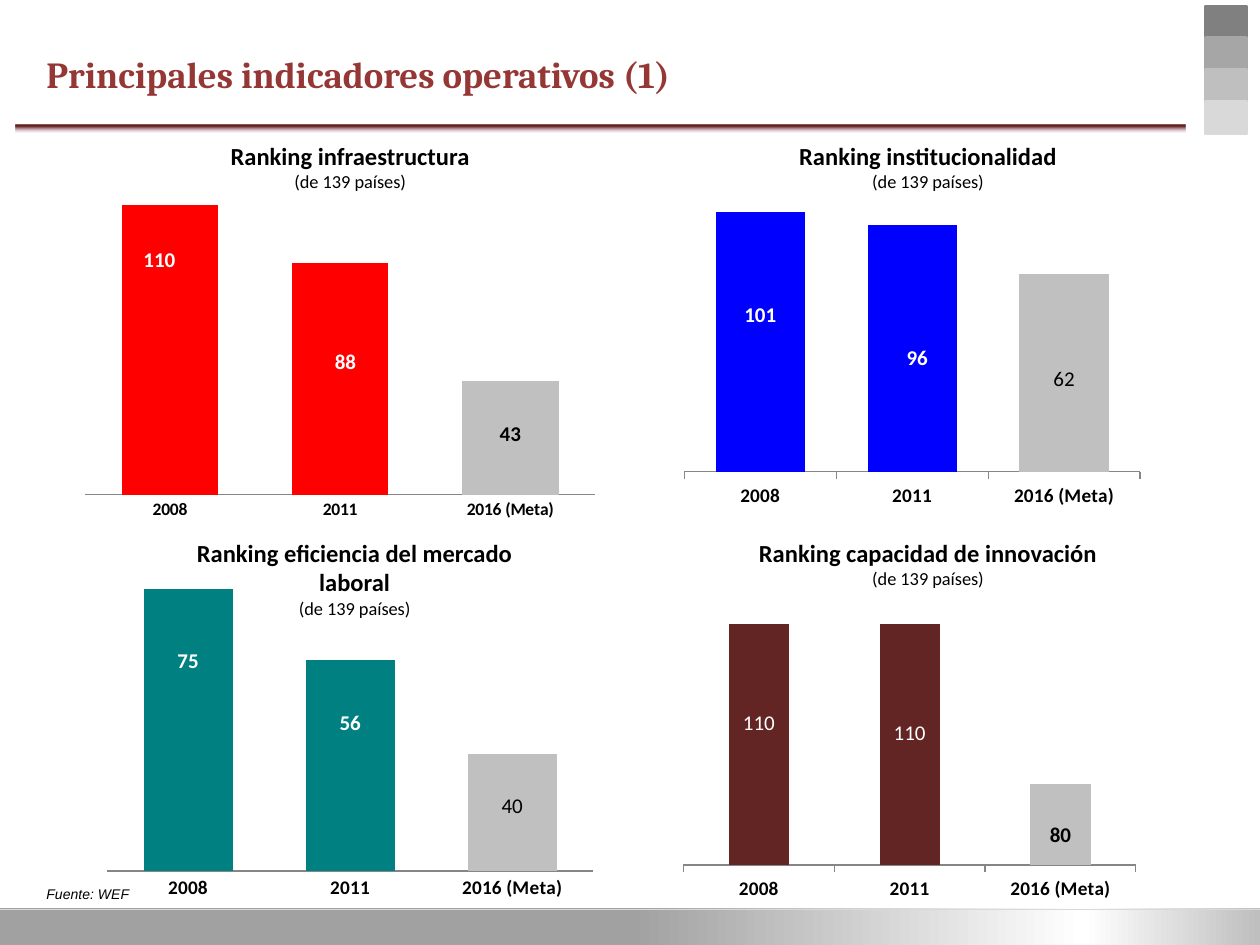
from dataclasses import dataclass
from typing import Any, NamedTuple

from pptx import Presentation
from pptx.chart.data import CategoryChartData
from pptx.dml.color import RGBColor
from pptx.enum.chart import XL_CHART_TYPE, XL_LABEL_POSITION, XL_TICK_MARK
from pptx.enum.shapes import MSO_CONNECTOR, MSO_SHAPE
from pptx.enum.text import PP_ALIGN
from pptx.oxml import parse_xml
from pptx.oxml.ns import nsdecls
from pptx.util import Inches, Pt


@dataclass(frozen=True)
class Theme:
    body: str = "Calibri"
    heading: str = "Cambria"
    note: str = "Arial"
    title: str = "953735"
    black: str = "000000"
    white: str = "FFFFFF"
    axis: str = "868686"
    goal: str = "C0C0C0"
    divider: str = "D9D9D9"
    steps: tuple = ("808080", "A6A6A6", "BFBFBF", "D9D9D9")
    footer: tuple = ((0, "A1A1A1", 100), (50, "A1A1A1", 100), (86, "FFFFFF", 100), (100, "BFBFBF", 100))
    rule: tuple = ((0, "632523", 100), (23, "632523", 100), (97, "FFEBFA", 43), (100, "85C2FF", 100))
    title_size: float = 21
    head_size: float = 14
    sub_size: float = 10.5
    label_size: float = 12
    note_size: float = 8


class Box(NamedTuple):
    """Left, top, width and height as percent of the slide."""
    left: float
    top: float
    width: float
    height: float

    def emu(self) -> tuple[int, ...]:
        spans = (prs.slide_width, prs.slide_height) * 2
        return tuple(int(span * share / 100) for span, share in zip(spans, self))


class Label(NamedTuple):
    text: str
    dx: float
    dy: float
    color: str
    bold: bool


class Panel(NamedTuple):
    heading: str
    head_box: Box
    chart_box: Box
    plot: tuple[float, float, float, float]
    values: tuple[int, ...]
    scale: tuple[float, float]
    gap: int
    color: str
    axis_size: float
    axis_width: float
    tick: Any
    labels: tuple[Label, ...]


T = Theme()
W, B = T.white, T.black
YEARS = ("2008", "2011", "2016 (Meta)")
ROWS = (14.27, 56.27)
NONE, OUT = XL_TICK_MARK.NONE, XL_TICK_MARK.OUTSIDE

PANELS = (
    Panel("Ranking infraestructura", Box(15.6, ROWS[0], 24.4, 6.27), Box(5.9, 20.67, 42.2, 35.2),
          (0.02, 0.02, 0.96, 0.88), (110, 88, 43), (0, 111), 76, "FF0000", 10, 0.75, NONE,
          (Label("110", -0.02, -0.27, W, True), Label("88", 0.01, -0.05, W, True),
           Label("43", 0, -0.01, B, True))),
    Panel("Ranking institucionalidad", Box(57.9, ROWS[0], 31.5, 6.27), Box(52.3, 20.13, 40.2, 34.67),
          (0.05, 0.05, 0.9, 0.81), (101, 96, 77), (0, 103), 70, "0000FF", 11, 0.75, OUT,
          (Label("101", 0, -0.08, W, True), Label("96", 0.01, 0.03, W, True),
           Label("62", 0, 0.02, B, False))),
    Panel("Ranking eficiencia del mercado laboral", Box(11.6, ROWS[1], 33.1, 6.27),
          Box(7.7, 61.6, 40.2, 34.4),
          (0.02, 0.02, 0.96, 0.87), (75, 56, 31), (0, 75), 82, "008080", 11, 1, NONE,
          (Label("75", 0, -0.21, W, True), Label("56", 0, -0.13, W, True),
           Label("40", 0, -0.02, B, False))),
    Panel("Ranking capacidad de innovación", Box(57.9, ROWS[1], 31.5, 6.27),
          Box(53.1, 59.47, 38.2, 37.73),
          (0.03, 0.06, 0.94, 0.79), (110, 110, 108), (107, 110.5), 150, "632523", 11, 0.75, OUT,
          (Label("110", 0, -0.06, W, False), Label("110", 0, -0.03, W, False),
           Label("80", 0, 0.03, B, True))),
)


def put(obj: Any, fmt: dict[str, Any]) -> None:
    for name, value in fmt.items():
        setattr(obj, name, value)


def style(font: Any, name: str, size: float, color: str, bold: bool = False, italic: bool = False) -> None:
    put(font, {"name": name, "size": Pt(size), "bold": bold, "italic": italic})
    font.color.rgb = RGBColor.from_string(color)


def paint(fill: Any, color: str) -> None:
    fill.solid()
    fill.fore_color.rgb = RGBColor.from_string(color)


def add_block(box: Box) -> Any:
    sp = s.shapes.add_shape(MSO_SHAPE.RECTANGLE, *box.emu())
    sp.shadow.inherit = False
    return sp


def add_gradient(box: Box, stops: tuple, angle: int) -> None:
    sp = add_block(box)
    sp.line.fill.background()
    marks = "".join(
        f'<a:gs pos="{pos * 1000}"><a:srgbClr val="{color}"><a:alpha val="{alpha * 1000}"/></a:srgbClr></a:gs>'
        for pos, color, alpha in stops)
    grad = parse_xml(f'<a:gradFill {nsdecls("a")} rotWithShape="1"><a:gsLst>{marks}</a:gsLst>'
                     f'<a:lin ang="{angle * 60000}" scaled="0"/></a:gradFill>')
    sp._element.spPr.find(".//{*}prstGeom").addnext(grad)


def add_text(box: Box, lines: tuple, align: Any = PP_ALIGN.LEFT, margin: float = 0.1) -> None:
    tf = s.shapes.add_textbox(*box.emu()).text_frame
    put(tf, {"word_wrap": True, "margin_left": Inches(margin), "margin_right": Inches(margin)})
    for i, (text, fmt) in enumerate(lines):
        p = tf.add_paragraph() if i else tf.paragraphs[0]
        p.alignment = align
        r = p.add_run()
        r.text = text
        style(r.font, **fmt)


def manual_layout(x: float, y: float, size: str = "", edge: str = "") -> Any:
    return parse_xml(f'<c:layout {nsdecls("c")}><c:manualLayout>{edge}'
                     f'<c:x val="{x}"/><c:y val="{y}"/>{size}</c:manualLayout></c:layout>')


def add_label(point: Any, label: Label, value: int) -> None:
    dl = point.data_label
    if label.text == str(value):
        font = dl.font
    else:
        r = dl.text_frame.paragraphs[0].add_run()
        r.text = label.text
        font = r.font
    style(font, T.body, T.label_size, label.color, label.bold)
    dl.position = XL_LABEL_POSITION.CENTER


def add_panel(panel: Panel) -> None:
    data = CategoryChartData()
    data.categories = YEARS
    data.add_series("Ranking", panel.values)
    chart = s.shapes.add_chart(XL_CHART_TYPE.COLUMN_CLUSTERED, *panel.chart_box.emu(), data).chart
    put(chart, {"has_legend": False, "has_title": False})
    style(chart.font, T.body, 10, B)
    low, high = panel.scale
    put(chart.value_axis, {"minimum_scale": low, "maximum_scale": high,
                           "has_major_gridlines": False, "visible": False})
    axis = chart.category_axis
    put(axis, {"major_tick_mark": panel.tick, "minor_tick_mark": NONE, "has_major_gridlines": False})
    style(axis.tick_labels.font, T.body, panel.axis_size, B, True)
    paint(axis.format.line.fill, T.axis)
    axis.format.line.width = Pt(panel.axis_width)
    plot = chart.plots[0]
    put(plot, {"gap_width": panel.gap, "vary_by_categories": False})
    ser = plot.series[0]
    ser.invert_if_negative = False
    paint(ser.format.fill, panel.color)
    paint(ser.points[2].format.fill, T.goal)
    for i, label in enumerate(panel.labels):
        add_label(ser.points[i], label, panel.values[i])
    for leader in ser._element.xpath(".//c:showLeaderLines"):
        leader.set("val", "0")
    for dl, label in zip(ser._element.xpath(".//c:dLbl"), panel.labels):
        for old in dl.findall("{*}layout"):
            dl.remove(old)
        dl.find("{*}idx").addnext(manual_layout(label.dx, label.dy))

    space = chart._chartSpace
    area = space.find(".//{*}plotArea")
    for old in area.findall("{*}layout"):
        area.remove(old)
    x, y, w, h = panel.plot
    area.insert(0, manual_layout(
        x, y, f'<c:w val="{w}"/><c:h val="{h}"/>',
        '<c:layoutTarget val="inner"/><c:xMode val="edge"/><c:yMode val="edge"/>'))
    space.find("{*}chart").addnext(parse_xml(
        f'<c:spPr {nsdecls("c", "a")}><a:noFill/><a:ln><a:noFill/></a:ln></c:spPr>'))


def add_frame() -> None:
    add_gradient(Box(0, 96.13, 100, 3.87), T.footer, 0)
    left, top, width, _ = Box(0, 96.27, 100, 0).emu()
    line = s.shapes.add_connector(MSO_CONNECTOR.STRAIGHT, left, top, left + width, top)
    paint(line.line.fill, T.divider)
    line.line.width = Pt(0.75)
    line._element.spPr.append(parse_xml(f'<a:effectLst {nsdecls("a")}/>'))
    for i, color in enumerate(T.steps):
        sp = add_block(Box(95.7, 0.67 + i * 3.37, 3.2, 3.37))
        paint(sp.fill, color)
        paint(sp.line.fill, color)
        sp.line.width = Pt(2)
    add_gradient(Box(1.2, 13.2, 92.9, 0.8), T.rule, 90)


prs = Presentation()
put(prs, {"slide_width": Inches(10), "slide_height": Inches(7.5)})
s = prs.slides.add_slide(prs.slide_layouts[6])
add_frame()
HEAD = {"name": T.body, "size": T.head_size, "color": B, "bold": True}
SUB = {"name": T.body, "size": T.sub_size, "color": B}
for panel in PANELS:
    add_text(panel.head_box, ((panel.heading, HEAD), ("(de 139 países)", SUB)), PP_ALIGN.CENTER, 0.2)
for panel in PANELS:
    add_panel(panel)
add_text(Box(2.7, 93.07, 17.5, 3.2),
         (("Fuente: WEF", {"name": T.note, "size": T.note_size, "color": B, "italic": True}),))
add_text(Box(2.7, 4.8, 73.7, 8.4),
         (("Principales indicadores operativos (1)",
           {"name": T.heading, "size": T.title_size, "color": T.title, "bold": True}),))
prs.save("out.pptx")
